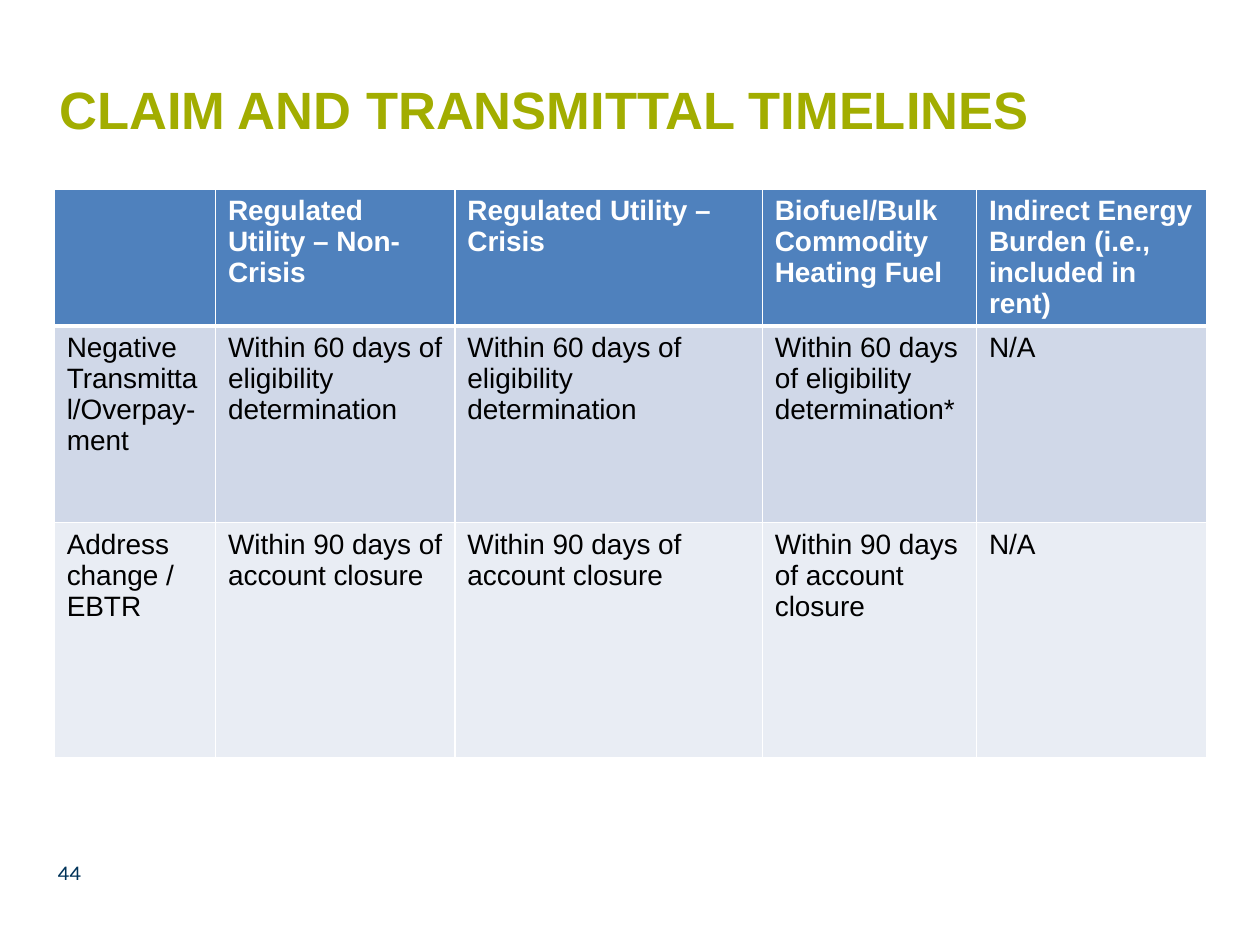
from lxml import etree
from pptx import Presentation
from pptx.dml.color import RGBColor
from pptx.enum.text import MSO_ANCHOR, MSO_AUTO_SIZE, PP_ALIGN
from pptx.oxml.ns import qn
from pptx.util import Inches, Pt

MIDDLE = MSO_ANCHOR.MIDDLE
LEFT = PP_ALIGN.LEFT
NO_FIT = MSO_AUTO_SIZE.NONE

TITLE = "CLAIM AND TRANSMITTAL TIMELINES"
NUMBER = "44"
ROWS = [
    ["", "Regulated Utility – Non-Crisis", "Regulated Utility – Crisis",
     "Biofuel/Bulk Commodity Heating Fuel",
     "Indirect Energy Burden (i.e., included in rent)"],
    ["Negative Transmittal/Overpay-ment",
     "Within 60 days of eligibility determination",
     "Within 60 days of eligibility determination",
     "Within 60 days of eligibility determination*", "N/A"],
    ["Address change / EBTR", "Within 90 days of account closure",
     "Within 90 days of account closure",
     "Within 90 days of account closure", "N/A"],
]
WIDTHS = [1.28, 1.9, 2.44, 1.7, 1.83]
HEIGHTS = [1.07, 1.56, 1.87]
COLORS = {"title": "A2AD00", "number": "003359", "head": "4F81BD",
          "odd": "D0D8E8", "even": "E9EDF4", "white": "FFFFFF", "black": "000000"}
FILLS = ["head", "odd", "even"]


def rgb(name):
    return RGBColor.from_string(COLORS[name])


def style(frame, size, color, bold=False, face="Arial"):
    for para in frame.paragraphs:
        para.alignment = LEFT
        for run in para.runs:
            font = run.font
            font.name, font.size, font.bold = face, Pt(size), bold
            font.color.rgb = rgb(color)


def border(cell, side, width):
    props = cell._tc.get_or_add_tcPr()
    line = etree.SubElement(props, qn("a:ln" + side), w=str(Pt(width)))
    fill = etree.SubElement(line, qn("a:solidFill"))
    etree.SubElement(fill, qn("a:srgbClr"), val=COLORS["white"])


def add_title(slide):
    title = slide.shapes.title
    title.left, title.top = Inches(0.37), Inches(0.3)
    title.width, title.height = Inches(9.15), Inches(1.13)
    frame = title.text_frame
    frame.text = TITLE
    frame.auto_size = NO_FIT
    frame.vertical_anchor = MIDDLE
    style(frame, 30, "title", True)


def add_grid(slide):
    table = slide.shapes.add_table(
        len(ROWS), len(WIDTHS), Inches(0.43), Inches(1.5),
        Inches(sum(WIDTHS)), Inches(sum(HEIGHTS))).table
    for col, width in zip(table.columns, WIDTHS):
        col.width = Inches(width)
    for r, texts in enumerate(ROWS):
        table.rows[r].height = Inches(HEIGHTS[r])
        head = r == 0
        for c, text in enumerate(texts):
            cell = table.cell(r, c)
            for side in "LRTB":
                thick = (head and side == "B") or (r == 1 and side == "T")
                border(cell, side, 3 if thick else 1)
            cell.fill.solid()
            cell.fill.fore_color.rgb = rgb(FILLS[r])
            cell.text_frame.text = text
            style(cell.text_frame, 16, "white" if head else "black", head)


def add_number(slide):
    box = slide.shapes.add_textbox(Inches(0.36), Inches(6.72), Inches(2.33), Inches(0.4))
    frame = box.text_frame
    frame.word_wrap = True
    frame.vertical_anchor = MIDDLE
    frame.text = NUMBER
    style(frame, 12, "number", face="Karla")


def main():
    deck = Presentation()
    deck.slide_width, deck.slide_height = Inches(10), Inches(7.5)
    slide = deck.slides.add_slide(deck.slide_layouts[5])
    add_title(slide)
    add_grid(slide)
    add_number(slide)
    deck.save("out.pptx")


if __name__ == "__main__":
    main()
